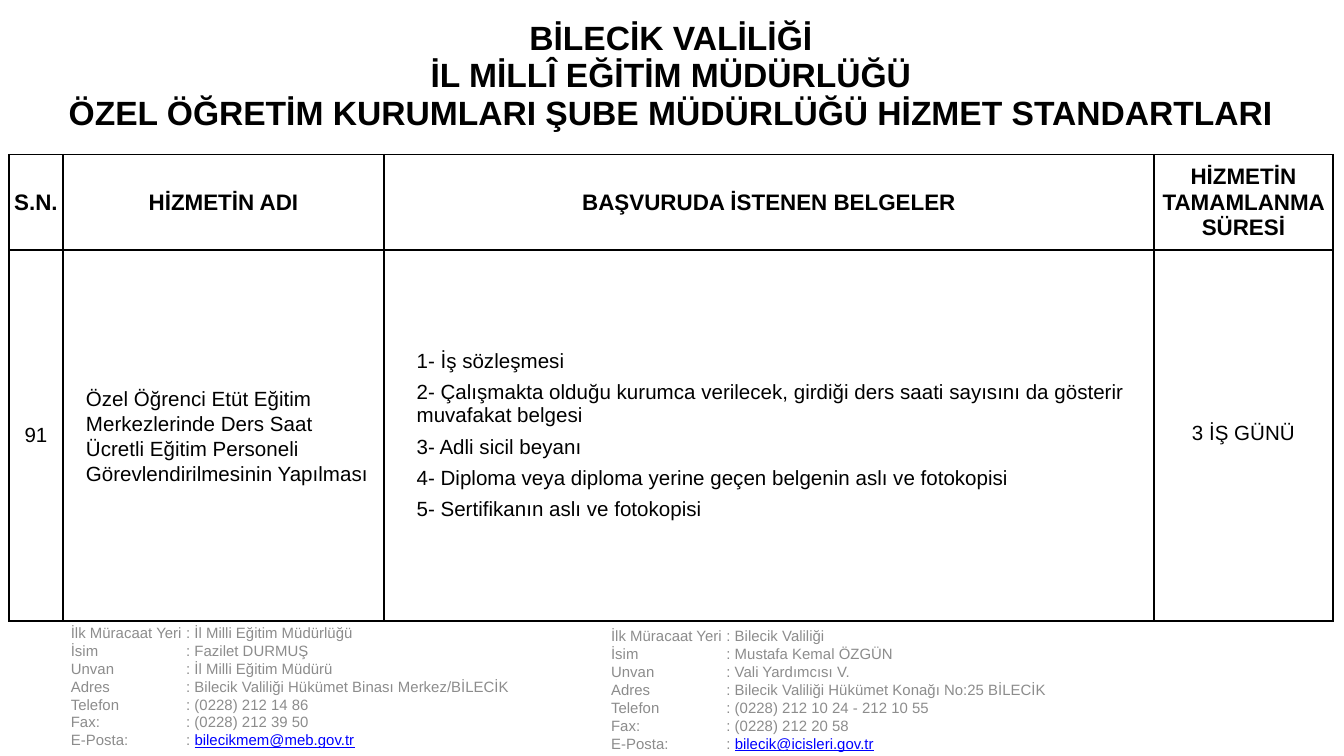
from dataclasses import dataclass
from typing import Optional

from lxml import etree
from pptx import Presentation
from pptx.dml.color import RGBColor
from pptx.enum.text import MSO_ANCHOR, PP_ALIGN
from pptx.oxml.ns import qn
from pptx.util import Cm, Pt

MID = MSO_ANCHOR.MIDDLE
LOW = MSO_ANCHOR.BOTTOM
MID_X = PP_ALIGN.CENTER
LEFT = PP_ALIGN.LEFT

BLACK = RGBColor(0x00, 0x00, 0x00)
GREY = RGBColor(0x8C, 0x8C, 0x8C)
BLUE = RGBColor(0x00, 0x00, 0xFF)
FONT = "Arial"

COLS = (1.02, 6.07, 14.55, 3.38)
ROWS = (2.97, 1.8, 7.01)
LABELS = ("İlk Müracaat Yeri", "İsim", "Unvan", "Adres", "Telefon", "Fax:", "E-Posta:")


@dataclass
class Entry:
    text: str
    size: float = 11
    bold: bool = False
    align: PP_ALIGN = MID_X
    inset: bool = False
    indent: float = 0
    before: float = 0
    lead: Optional[float] = None


@dataclass
class Office:
    left: float
    top: float
    facts: tuple[str, ...]
    mail: str


TITLE = Entry(
    "BİLECİK VALİLİĞİ\nİL MİLLÎ EĞİTİM MÜDÜRLÜĞÜ\n"
    "ÖZEL ÖĞRETİM KURUMLARI ŞUBE MÜDÜRLÜĞÜ HİZMET STANDARTLARI",
    18,
    True,
)
HEADS = [
    Entry(text, 12, True)
    for text in ("S.N.", "HİZMETİN ADI", "BAŞVURUDA İSTENEN BELGELER", "HİZMETİN TAMAMLANMA SÜRESİ")
]
BODY = [
    Entry("91"),
    Entry(
        "Özel Öğrenci Etüt Eğitim Merkezlerinde Ders Saat Ücretli "
        "Eğitim Personeli Görevlendirilmesinin Yapılması",
        align=LEFT, inset=True, indent=0.18, lead=1.1,
    ),
    Entry(
        "1- İş sözleşmesi\n"
        "2- Çalışmakta olduğu kurumca verilecek, girdiği ders saati sayısını "
        "da gösterir muvafakat belgesi\n"
        "3- Adli sicil beyanı\n"
        "4- Diploma veya diploma yerine geçen belgenin aslı ve fotokopisi\n"
        "5- Sertifikanın aslı ve fotokopisi",
        align=LEFT, inset=True, indent=0.36, before=4.5,
    ),
    Entry("3 İŞ GÜNÜ", inset=True, lead=Pt(10)),
]
DESKS = [
    Office(
        1.09, 11.73,
        ("İl Milli Eğitim Müdürlüğü", "Fazilet DURMUŞ", "İl Milli Eğitim Müdürü",
         "Bilecik Valiliği Hükümet Binası Merkez/BİLECİK",
         "(0228) 212 14 86", "(0228) 212 39 50", ""),
        "bilecikmem@meb.gov.tr",
    ),
    Office(
        11.3, 11.79,
        ("Bilecik Valiliği", "Mustafa Kemal ÖZGÜN", "Vali Yardımcısı V.",
         "Bilecik Valiliği Hükümet Konağı No:25 BİLECİK",
         "(0228) 212 10 24 - 212 10 55", "(0228) 212 20 58", ""),
        "bilecik@icisleri.gov.tr",
    ),
]


def style(run, size: float, color: RGBColor, bold: bool = False) -> None:
    font = run.font
    font.name, font.size, font.bold = FONT, Pt(size), bold
    font.color.rgb = color


def border(cell) -> None:
    props = cell._tc.get_or_add_tcPr()
    for spot, side in enumerate(("lnL", "lnR", "lnT", "lnB")):
        line = etree.Element(qn(f"a:{side}"), w=str(Pt(1)))
        fill = etree.SubElement(line, qn("a:solidFill"))
        etree.SubElement(fill, qn("a:srgbClr"), val=str(BLACK))
        props.insert(spot, line)


def write(cell, entry: Entry) -> None:
    cell.fill.background()
    cell.vertical_anchor = MID
    if not entry.inset:
        cell.margin_left = cell.margin_right = cell.margin_top = cell.margin_bottom = 0
    cell.text_frame.text = entry.text
    for para in cell.text_frame.paragraphs:
        para.alignment = entry.align
        para.space_before = Pt(entry.before)
        if entry.lead:
            para.line_spacing = entry.lead
        if entry.indent:
            props = para._p.get_or_add_pPr()
            props.set("marL", str(Cm(entry.indent)))
            props.set("indent", "0")
        for run in para.runs:
            style(run, entry.size, BLACK, entry.bold)


def grid(slide) -> None:
    frame = slide.shapes.add_table(
        len(ROWS), len(COLS), Cm(0.17), Cm(-0.05), Cm(sum(COLS)), Cm(sum(ROWS))
    )
    table = frame.table
    table.first_row = table.horz_banding = False
    for col, width in zip(table.columns, COLS):
        col.width = Cm(width)
    for row, height in zip(table.rows, ROWS):
        row.height = Cm(height)
    table.cell(0, 0).merge(table.cell(0, len(COLS) - 1))
    write(table.cell(0, 0), TITLE)
    for y, line in enumerate((HEADS, BODY), 1):
        for x, entry in enumerate(line):
            write(table.cell(y, x), entry)
            border(table.cell(y, x))


def contact(slide, desk: Office) -> None:
    box = slide.shapes.add_textbox(Cm(desk.left), Cm(desk.top), Cm(12), Cm(2.54))
    frame = box.text_frame
    frame.word_wrap = True
    frame.vertical_anchor = LOW
    frame.text = "\n".join(f"{label}\t: {fact}" for label, fact in zip(LABELS, desk.facts))
    for para in frame.paragraphs:
        tabs = etree.SubElement(para._p.get_or_add_pPr(), qn("a:tabLst"))
        etree.SubElement(tabs, qn("a:tab"), pos=str(Cm(2.18)), algn="l")
        for run in para.runs:
            style(run, 8, GREY)
    mail = frame.paragraphs[-1].add_run()
    mail.text = desk.mail
    style(mail, 8, BLUE)
    mail.font.underline = True


def main() -> None:
    deck = Presentation()
    deck.slide_width, deck.slide_height = Cm(25.4), Cm(14.28)
    slide = deck.slides.add_slide(deck.slide_layouts[6])
    for desk in DESKS:
        contact(slide, desk)
    grid(slide)
    deck.save("out.pptx")


if __name__ == "__main__":
    main()
